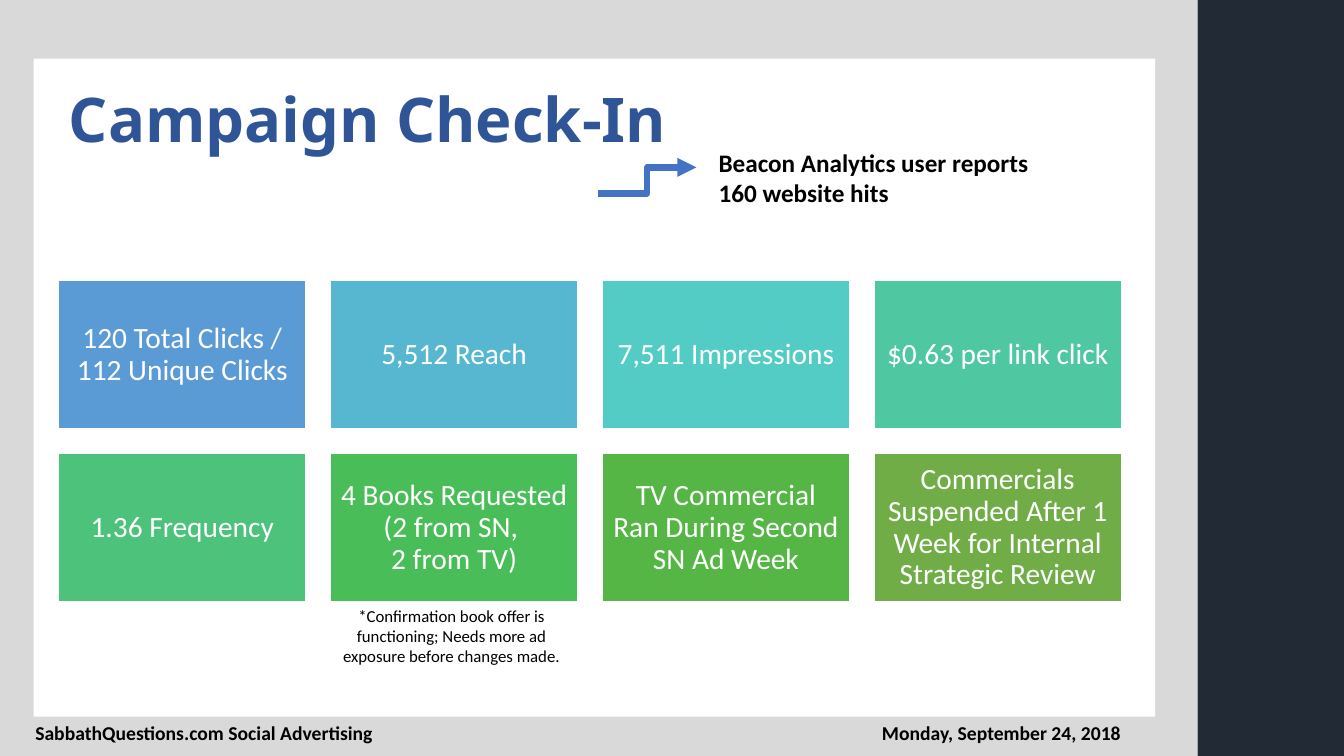
from dataclasses import dataclass

from lxml.etree import SubElement
from pptx import Presentation
from pptx.dml.color import RGBColor
from pptx.enum.shapes import MSO_CONNECTOR, MSO_SHAPE
from pptx.enum.text import MSO_ANCHOR, MSO_AUTO_SIZE, PP_ALIGN
from pptx.oxml.ns import qn
from pptx.util import Cm, Pt

COLUMNS = 4
CARD_LEFT, CARD_TOP = 1.48, 7.07
CARD_WIDTH, CARD_HEIGHT = 6.23, 3.74
CARD_GAP = 0.62


@dataclass
class Box:
    left: float
    top: float
    width: float
    height: float

    def lengths(self) -> list:
        return [Cm(value) for value in (self.left, self.top, self.width, self.height)]


@dataclass
class Panel:
    box: Box
    color: str


@dataclass
class Card:
    text: str
    color: str


@dataclass
class Label:
    text: str
    box: Box
    size: float
    bold: bool = True
    alignment: PP_ALIGN = PP_ALIGN.LEFT


PANELS = [
    Panel(Box(0, 0, 30.18, 19.05), "D9D9D9"),
    Panel(Box(0.85, 1.48, 28.26, 16.58), "FFFFFF"),
    Panel(Box(30.18, 0, 3.69, 19.05), "222A35"),
]

CARDS = [
    Card("120 Total Clicks / 112 Unique Clicks", "5B9BD5"),
    Card("5,512 Reach", "57B7D1"),
    Card("7,511 Impressions", "53CCC5"),
    Card("$0.63 per link click", "4FC7A0"),
    Card("1.36 Frequency", "4CC27B"),
    Card("4 Books Requested (2 from SN, \n2 from TV)", "48BD58"),
    Card("TV Commercial Ran During Second SN Ad Week", "55B646"),
    Card("Commercials Suspended After 1 Week for Internal Strategic Review", "70AD47"),
]

LABELS = [
    Label("SabbathQuestions.com Social Advertising", Box(0.64, 18.03, 13.26, 0.86), 14),
    Label("Monday, September 24, 2018", Box(15.24, 18.03, 13.26, 0.86), 14,
          alignment=PP_ALIGN.RIGHT),
    Label("*Confirmation book offer is functioning; Needs more ad exposure before changes made.",
          Box(8.33, 15.14, 6.1, 1.8), 12, False, PP_ALIGN.CENTER),
    Label("Beacon Analytics user reports \n160 website hits", Box(17.86, 3.58, 10.39, 1.8), 18),
]


def rgb(color: str) -> RGBColor:
    return RGBColor.from_string(color)


def apply(target, values: dict) -> None:
    for name, value in values.items():
        setattr(target, name, value)


def write(shape, text: str, color: str, frame: dict, layout: dict, font: dict) -> None:
    apply(shape.text_frame, {"word_wrap": True, **frame})
    paragraph = shape.text_frame.paragraphs[0]
    paragraph.text = text
    apply(paragraph, layout)
    for run in paragraph.runs:
        apply(run.font, {"name": "Calibri", **font})
        run.font.color.rgb = rgb(color)


def add_rectangle(slide, box: Box, color: str):
    shape = slide.shapes.add_shape(MSO_SHAPE.RECTANGLE, *box.lengths())
    shape.shadow.inherit = False
    shape.fill.solid()
    shape.fill.fore_color.rgb = rgb(color)
    shape.line.fill.background()
    return shape


def add_title(slide) -> None:
    title = slide.shapes.title
    apply(title, dict(zip(("left", "top", "width", "height"),
                          Box(1.48, 1.48, 26.77, 3.2).lengths())))
    write(title, "Campaign Check-In", "2F5597",
          {"vertical_anchor": MSO_ANCHOR.MIDDLE, "auto_size": MSO_AUTO_SIZE.NONE},
          {"alignment": PP_ALIGN.LEFT, "line_spacing": 0.9},
          {"name": "Noto Sans", "size": Pt(44), "bold": True})


def add_card(slide, index: int, card: Card) -> None:
    row, column = divmod(index, COLUMNS)
    box = Box(CARD_LEFT + column * (CARD_WIDTH + CARD_GAP),
              CARD_TOP + row * (CARD_HEIGHT + CARD_GAP), CARD_WIDTH, CARD_HEIGHT)
    shape = add_rectangle(slide, box, card.color)
    shape.line.color.rgb = rgb("FFFFFF")
    shape.line.width = Pt(1)
    margins = {f"margin_{side}": Cm(0.22) for side in ("left", "top", "right", "bottom")}
    write(shape, card.text, "FFFFFF", {"vertical_anchor": MSO_ANCHOR.MIDDLE, **margins},
          {"alignment": PP_ALIGN.CENTER, "line_spacing": 0.9}, {"size": Pt(21)})


def add_label(slide, label: Label) -> None:
    shape = slide.shapes.add_textbox(*label.box.lengths())
    write(shape, label.text, "000000", {"auto_size": MSO_AUTO_SIZE.SHAPE_TO_FIT_TEXT},
          {"alignment": label.alignment}, {"size": Pt(label.size), "bold": label.bold})


def add_arrow(slide) -> None:
    arrow = slide.shapes.add_connector(MSO_CONNECTOR.ELBOW,
                                       Cm(15.06), Cm(4.88), Cm(17.55), Cm(4.22))
    arrow.line.color.rgb = rgb("4472C4")
    arrow.line.width = Pt(4.5)
    properties = arrow._element.spPr
    SubElement(properties.find(qn("a:ln")), qn("a:tailEnd"), type="triangle")
    SubElement(properties, qn("a:effectLst"))


def main() -> None:
    presentation = Presentation()
    apply(presentation, {"slide_width": Cm(33.87), "slide_height": Cm(19.05)})
    slide = presentation.slides.add_slide(presentation.slide_layouts.get_by_name("Title Only"))
    for panel in PANELS:
        add_rectangle(slide, panel.box, panel.color)
    title_element = slide.shapes.title._element
    title_element.getparent().append(title_element)
    add_title(slide)
    for index, card in enumerate(CARDS):
        add_card(slide, index, card)
    for label in LABELS:
        add_label(slide, label)
    add_arrow(slide)
    presentation.save("out.pptx")


if __name__ == "__main__":
    main()
